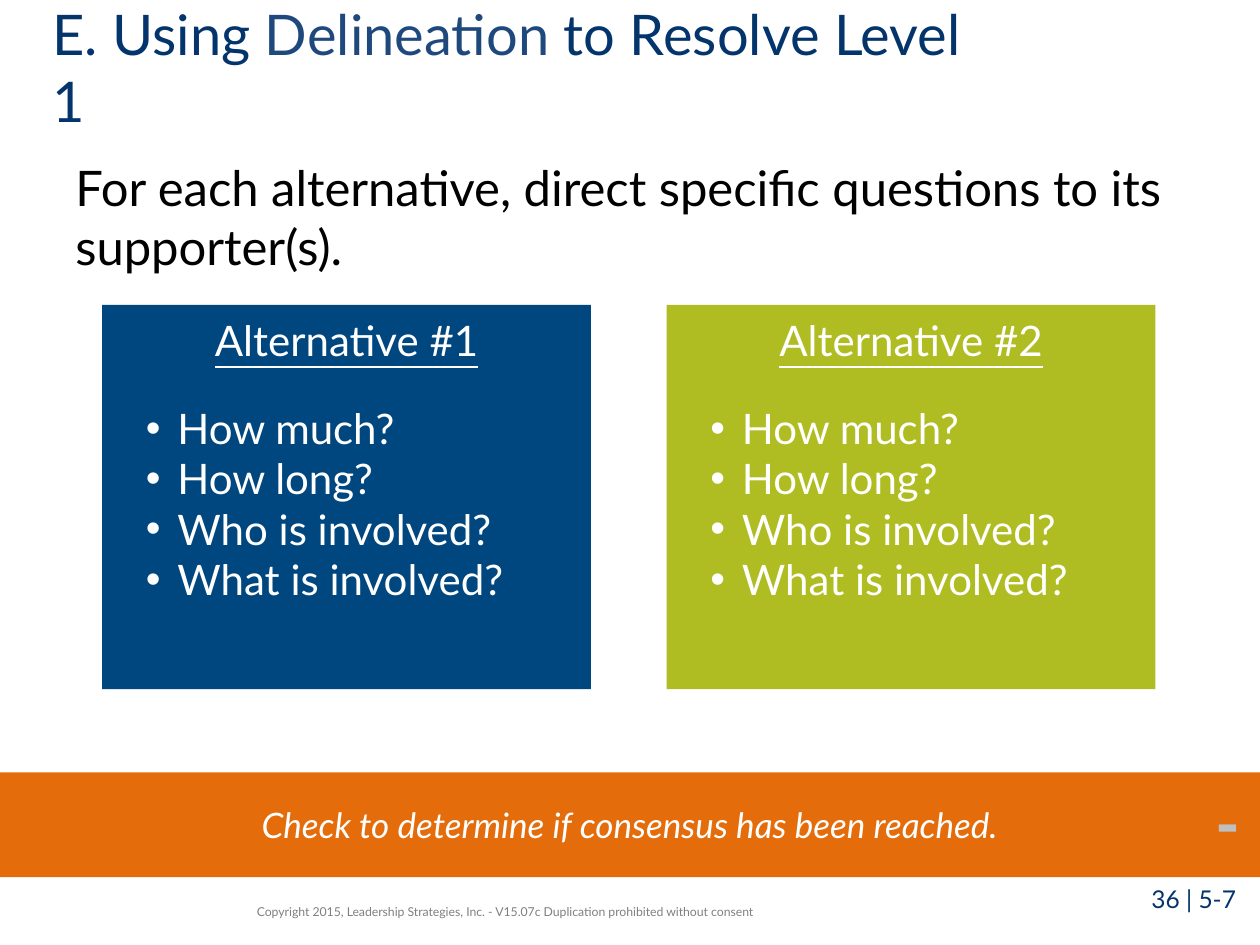
from lxml.etree import SubElement
from pptx import Presentation
from pptx.dml.color import RGBColor
from pptx.enum.shapes import MSO_SHAPE
from pptx.enum.text import MSO_ANCHOR, PP_ALIGN
from pptx.oxml.ns import qn
from pptx.util import Pt

# Content
NAVY, BLACK, WHITE, GRAY = "04346C", "000000", "FFFFFF", "808080"
TITLE = [("E. Using ", NAVY), ("Delineation", "1F497D"), (" to Resolve Level 1", NAVY)]
INTRO = "For each alternative, direct specific questions to its supporter(s)."
ALTERNATIVES = [("Alternative #1", "00467F"), ("Alternative #2", "AFBD22")]
QUESTIONS = ["How much?", "How long?", "Who is involved?", "What is involved?"]
CONCLUSION = "Check to determine if consensus has been reached."
COPYRIGHT = ("Copyright 2015, Leadership Strategies, Inc. - V15.07c "
             "Duplication prohibited without consent")
PAGE_NUMBER = "36 | 5-7"

# Layout of the two panels
PANEL_LEFT, PANEL_TOP, PANEL_WIDTH, PANEL_HEIGHT = 58.3, 174.2, 279.4, 219.6
PANEL_STEP = 322.6


def color(value):
    return RGBColor.from_string(value)


def set_font(font, size, fill=None, name="Lato"):
    font.name, font.size = name, Pt(size)
    if fill:
        font.color.rgb = color(fill)


def add_text(slide, box, runs, size, anchor=MSO_ANCHOR.TOP, name="Lato"):
    """Add a text box holding one paragraph of (text, colour) runs."""
    shape = slide.shapes.add_textbox(*map(Pt, box))
    frame = shape.text_frame
    frame.word_wrap = True
    frame.vertical_anchor = anchor
    paragraph = frame.paragraphs[0]
    set_font(paragraph.font, size, name=name)
    for text, fill in runs:
        run = paragraph.add_run()
        run.text = text
        run.font.color.rgb = color(fill)
    return paragraph


def add_block(slide, box, fill, anchor):
    """Add a plain filled rectangle and return its text frame."""
    shape = slide.shapes.add_shape(MSO_SHAPE.RECTANGLE, *map(Pt, box))
    shape.shadow.inherit = False
    shape.fill.solid()
    shape.fill.fore_color.rgb = color(fill)
    shape.line.fill.background()
    shape.text_frame.vertical_anchor = anchor
    return shape.text_frame


def add_bullet(paragraph):
    properties = paragraph._p.get_or_add_pPr()
    properties.set("marL", str(Pt(36)))
    properties.set("indent", str(-Pt(18)))
    SubElement(properties, qn("a:buFont")).set("typeface", "Arial")
    SubElement(properties, qn("a:buChar")).set("char", "•")


def add_panel(slide, left, heading, fill):
    box = (left, PANEL_TOP, PANEL_WIDTH, PANEL_HEIGHT)
    frame = add_block(slide, box, fill, MSO_ANCHOR.TOP)
    frame.margin_top = Pt(5.4)
    paragraph = frame.paragraphs[0]
    paragraph.text = heading
    paragraph.alignment = PP_ALIGN.CENTER
    paragraph.space_after = Pt(21.6)
    set_font(paragraph.font, 24, WHITE)
    paragraph.font.underline = True
    for question in QUESTIONS:
        paragraph = frame.add_paragraph()
        paragraph.text = question
        paragraph.alignment = PP_ALIGN.LEFT
        add_bullet(paragraph)
        set_font(paragraph.font, 24, WHITE)


def main():
    presentation = Presentation()
    presentation.slide_width, presentation.slide_height = Pt(720), Pt(540)
    slide = presentation.slides.add_slide(presentation.slide_layouts[6])

    # Title, introduction and copyright line
    add_text(slide, (23, 0, 537, 76.3), TITLE, 32, MSO_ANCHOR.MIDDLE)
    add_text(slide, (36, 86.4, 648, 86.4), [(INTRO, BLACK)], 28)
    add_text(slide, (139.7, 509.8, 334, 22.3), [(COPYRIGHT, GRAY)], 7, MSO_ANCHOR.MIDDLE)

    # One panel for each alternative
    for index, (heading, fill) in enumerate(ALTERNATIVES):
        add_panel(slide, PANEL_LEFT + index * PANEL_STEP, heading, fill)

    # Conclusion band
    band = add_block(slide, (0, 441.4, 720, 59.8), "E46C0A", MSO_ANCHOR.MIDDLE)
    paragraph = band.paragraphs[0]
    paragraph.text = CONCLUSION
    paragraph.alignment = PP_ALIGN.CENTER
    set_font(paragraph.font, 20, WHITE)
    paragraph.font.italic = True

    # Dash at the band's end, and page number
    dash = add_text(slide, (688.3, 441.4, 52.6, 55.4), [("-", "BFBFBF")], 40, name="Calibri")
    dash.font.bold = True
    page = add_text(slide, (644.4, 501.8, 75.6, 38.2), [(PAGE_NUMBER, NAVY)], 14)
    page.alignment = PP_ALIGN.CENTER

    presentation.save("out.pptx")


if __name__ == "__main__":
    main()
